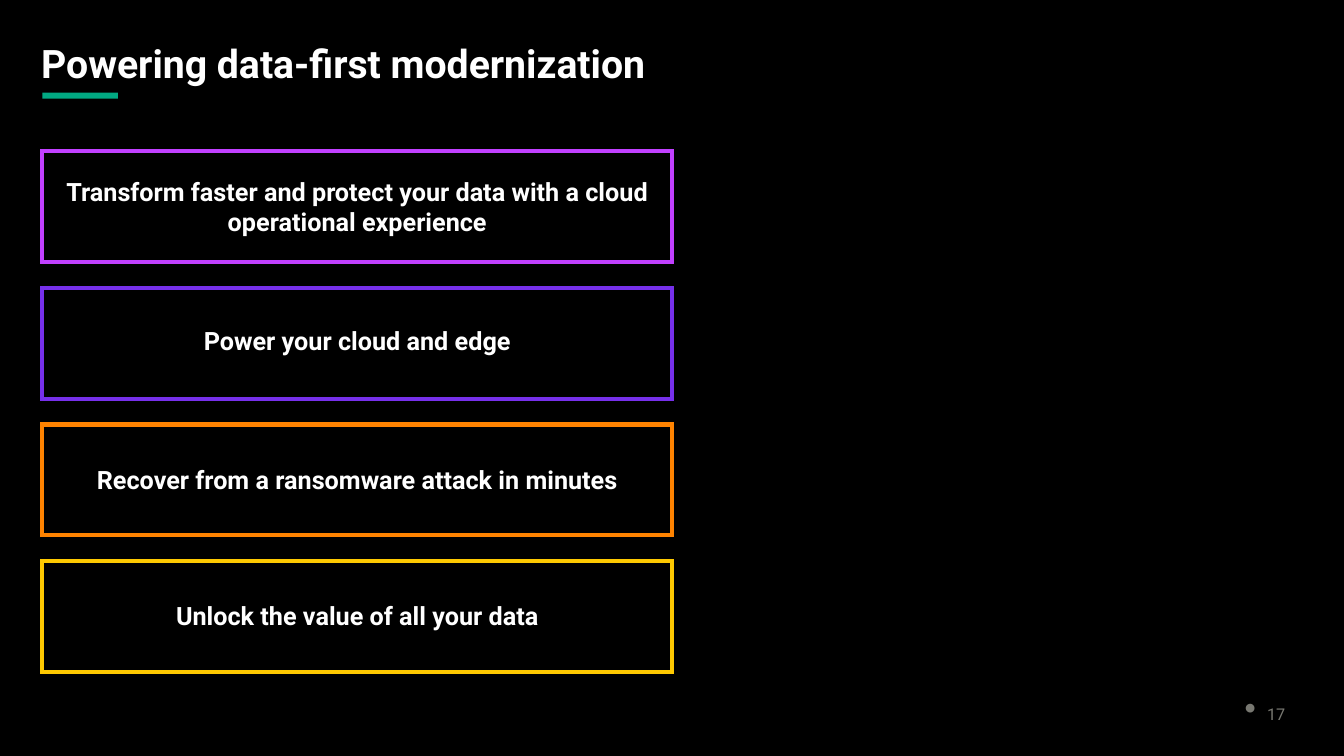
"""Builds the slide on data-first modernization."""
from lxml import etree
from pptx import Presentation
from pptx.dml.color import RGBColor
from pptx.enum import shapes, text
from pptx.oxml.ns import qn
from pptx.util import Pt

TITLE = "Powering data-first modernization"
PAGE = "17"
CARDS = [
    ("Transform faster and protect your data with a cloud operational experience", "C140FF", 122.4, 51.1),
    ("Power your cloud and edge", "7630EA", 229, 28.8),
    ("Recover from a ransomware attack in minutes", "FF8300", 328.3, 28.8),
    ("Unlock the value of all your data", "FEC901", 425.5, 28.8),
]
THEME = {
    "font": "Roboto", "back": "000000", "text": "FFFFFF", "accent": "01A982",
    "muted": "787871", "title": 28, "card": 18, "page": 20,
}
LEFT, TOP, WIDE, HIGH, STEP = 30.24, 108, 450, 79.2, 97.6
PAD = 9.6


def color(name):
    return RGBColor.from_string(THEME.get(name, name))


def add_rect(slide, box, fill, line=None):
    rect = slide.shapes.add_shape(shapes.MSO_SHAPE.RECTANGLE, *map(Pt, box))
    rect.shadow.inherit = False
    rect.fill.solid()
    rect.fill.fore_color.rgb = color(fill)
    if line:
        rect.line.color.rgb = color(line)
        rect.line.width = Pt(3)
        etree.SubElement(rect.line._get_or_add_ln(), qn("a:miter")).set("lim", "800000")
    else:
        rect.line.fill.background()


def add_text(slide, words, box, size="card", tint="text", bold=True,
             align="LEFT", anchor="TOP", inset=3.6, space=None):
    frame = slide.shapes.add_textbox(*map(Pt, box)).text_frame
    frame.word_wrap = True
    frame.vertical_anchor = text.MSO_ANCHOR[anchor]
    frame.margin_top = frame.margin_bottom = Pt(inset)
    para = frame.paragraphs[0]
    para.alignment = text.PP_ALIGN[align]
    if space:
        para.line_spacing = space
    run = para.add_run()
    run.text = words
    run.font.name = THEME["font"]
    run.font.size = Pt(THEME[size])
    run.font.bold = bold
    run.font.color.rgb = color(tint)
    return para


def add_bullet(para):
    props = para._p.get_or_add_pPr()
    props.set("marL", str(Pt(16)))
    props.set("indent", str(Pt(-16)))
    etree.SubElement(props, qn("a:buSzPct")).set("val", "120000")
    etree.SubElement(props, qn("a:buChar")).set("char", "•")


def main():
    deck = Presentation()
    deck.slide_width, deck.slide_height = Pt(960), Pt(540)
    slide = deck.slides.add_slide(deck.slide_layouts[6])
    slide.background.fill.solid()
    slide.background.fill.fore_color.rgb = color("back")

    add_rect(slide, (LEFT, 66.2, 54, 4.3), "accent")
    page = add_text(slide, PAGE, (882, 496.1, 54, 28.8), size="page",
                    tint="muted", bold=False, anchor="MIDDLE", space=0.9)
    add_bullet(page)
    page.runs[0]._r.get_or_add_rPr().set("baseline", "10000")

    for row, (words, line, top, high) in enumerate(CARDS):
        add_rect(slide, (LEFT, TOP + row * STEP, WIDE, HIGH), "back", line)
        add_text(slide, words, (LEFT + PAD, top, WIDE - 2 * PAD, high), align="CENTER")

    add_text(slide, TITLE, (22.3, 31, 905, 31.7), size="title",
             anchor="MIDDLE", inset=7.2, space=0.9)
    deck.save("out.pptx")


if __name__ == "__main__":
    main()
